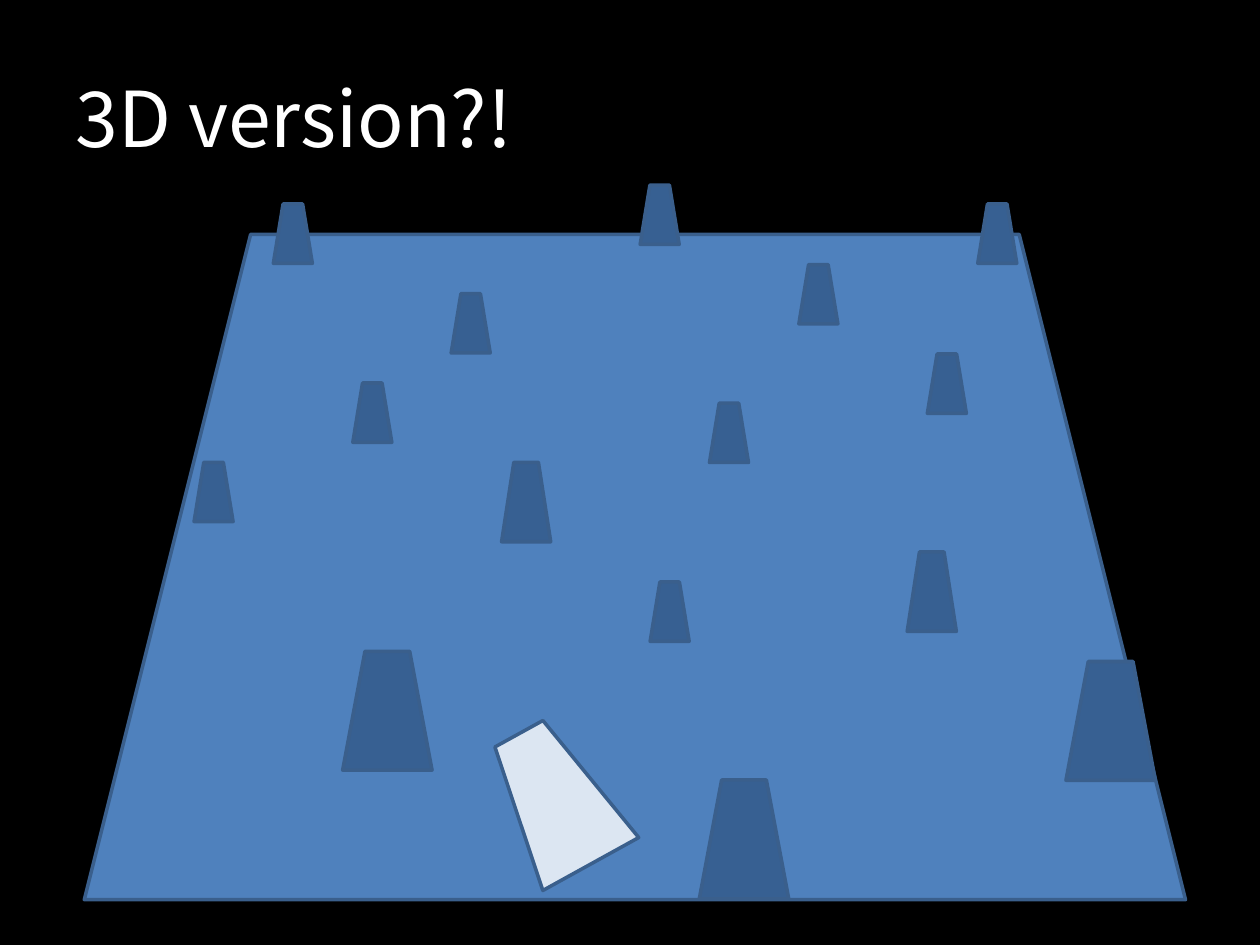
from pptx import Presentation
from pptx.dml.color import RGBColor
from pptx.enum.shapes import MSO_SHAPE
from pptx.enum.text import MSO_ANCHOR, PP_ALIGN
from pptx.util import Pt

COLORS = {
    "background": "000000",
    "title": "FFFFFF",
    "field": "4F81BD",
    "obstacle": "376092",
    "player": "DCE6F2",
    "outline": "3A5F8C",
}
FONT = "Noto Sans CJK KR"

# Width and height of each obstacle size, with the left and top of each one
OBSTACLES = {
    (22.3, 33.9): [
        (201.6, 218.9), (405.4, 230.4), (529.9, 202.3), (371.5, 332.6),
        (257.8, 167.8), (456.5, 151.2), (156.2, 116.6), (365.8, 105.8),
        (558.7, 116.6), (110.9, 264.2),
    ],
    (28.1, 45.4): [(286.6, 264.2), (518.4, 315.4)],
    (51.1, 67.9): [(195.8, 372.2), (399.6, 445.7), (609.1, 378)],
}


class SlideBuilder:
    def __init__(self, presentation):
        self.slide = presentation.slides.add_slide(presentation.slide_layouts[5])

    def color(self, name):
        return RGBColor.from_string(COLORS[name])

    def background(self, color):
        fill = self.slide.background.fill
        fill.solid()
        fill.fore_color.rgb = self.color(color)

    def title(self, text, left, top, width, height):
        shape = self.slide.shapes.title
        shape.left, shape.top = Pt(left), Pt(top)
        shape.width, shape.height = Pt(width), Pt(height)
        text_frame = shape.text_frame
        text_frame.text = text
        text_frame.vertical_anchor = MSO_ANCHOR.MIDDLE
        paragraph = text_frame.paragraphs[0]
        paragraph.alignment = PP_ALIGN.LEFT
        font = paragraph.runs[0].font
        font.name = FONT
        font.size = Pt(44)
        font.color.rgb = self.color("title")

    def trapezoid(self, color, left, top, width, height, rotation=0):
        shape = self.slide.shapes.add_shape(
            MSO_SHAPE.TRAPEZOID, Pt(left), Pt(top), Pt(width), Pt(height))
        shape.rotation = rotation
        shape.shadow.inherit = False
        shape.fill.solid()
        shape.fill.fore_color.rgb = self.color(color)
        shape.line.color.rgb = self.color("outline")
        shape.line.width = Pt(2)


def main():
    presentation = Presentation()
    presentation.slide_width, presentation.slide_height = Pt(720), Pt(540)

    builder = SlideBuilder(presentation)
    builder.background("background")
    builder.title("3D version?!", 36, 21.6, 648, 90)
    builder.trapezoid("field", 48.2, 133.9, 629.3, 380.2)
    builder.trapezoid("player", 285.8, 414, 62.6, 85, rotation=331.1)
    for (width, height), positions in OBSTACLES.items():
        for left, top in positions:
            builder.trapezoid("obstacle", left, top, width, height)

    presentation.save("out.pptx")


if __name__ == "__main__":
    main()
